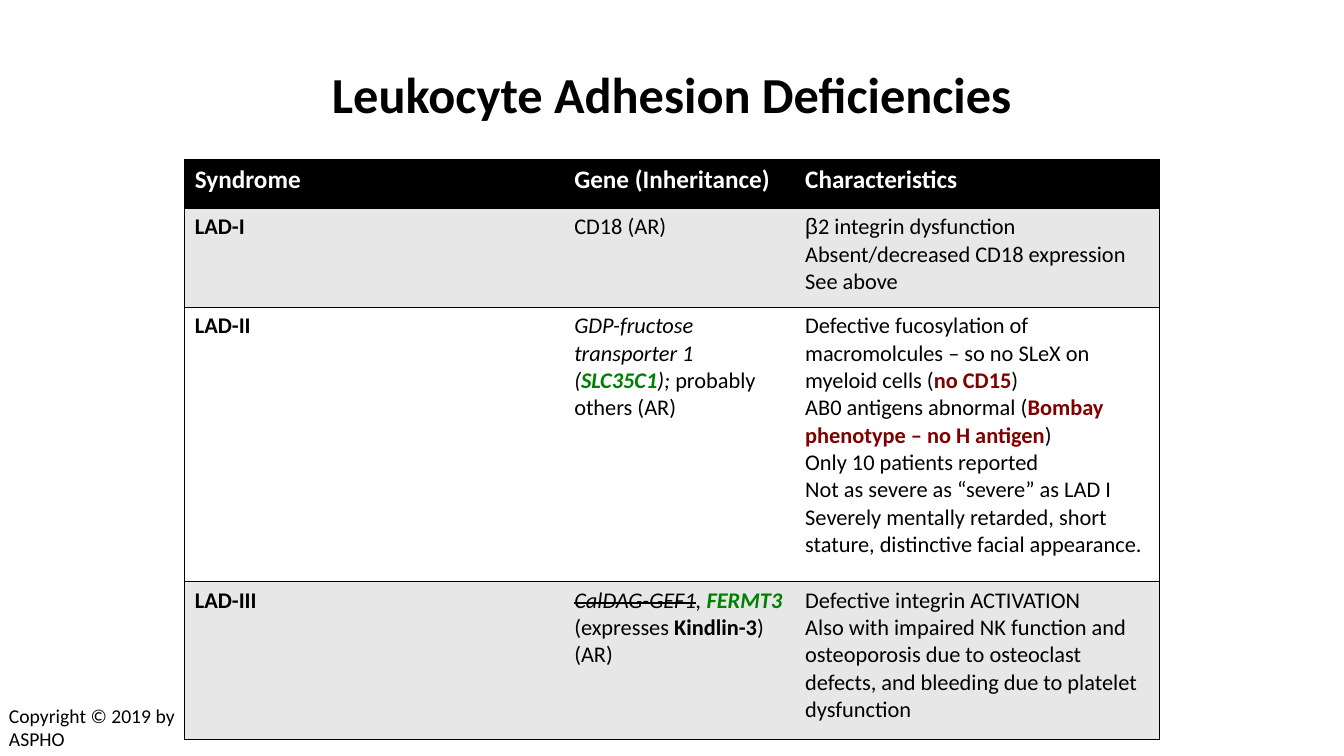
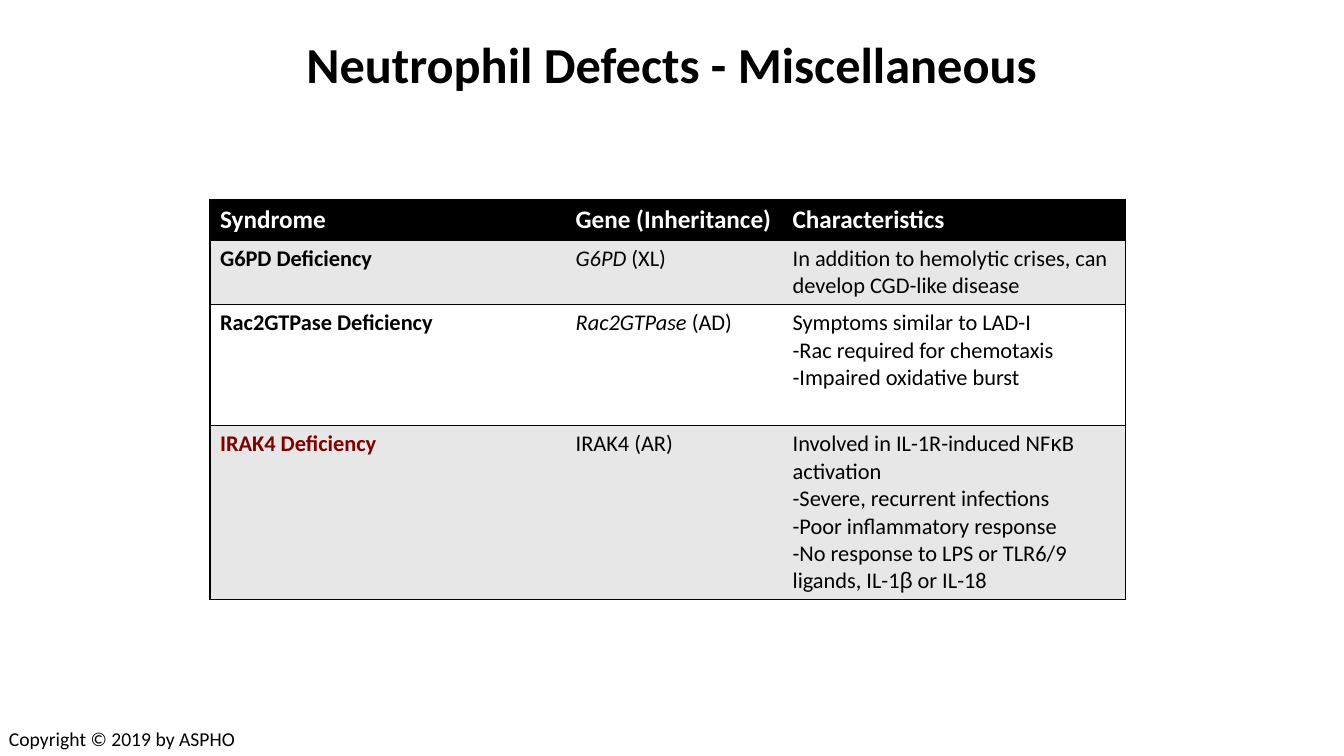
from dataclasses import dataclass

from lxml import etree
from pptx import Presentation
from pptx.dml.color import RGBColor
from pptx.enum.text import MSO_ANCHOR, PP_ALIGN
from pptx.oxml.ns import qn
from pptx.util import Pt

CENTER, LEFT = PP_ALIGN.CENTER, PP_ALIGN.LEFT
MIDDLE, TOP = MSO_ANCHOR.MIDDLE, MSO_ANCHOR.TOP


@dataclass(frozen=True)
class Theme:
    font: str = "Calibri"
    greek_font: str = "Arial"
    black: str = "000000"
    white: str = "FFFFFF"
    band: str = "E7E7E7"
    gene: str = "008000"
    alert: str = "800000"
    title_size: float = 36
    header_size: float = 18
    body_size: float = 16
    footer_size: float = 14
    border: float = 1
    inset_x: float = 7.2
    inset_y: float = 3.6


@dataclass(frozen=True)
class Style:
    color: str = Theme.black
    bold: bool = False
    italic: bool = False
    strike: bool = False
    font: str = Theme.font


THEME = Theme()
SLIDE_WIDTH, SLIDE_HEIGHT = 960, 540
BLANK_LAYOUT = 6

PLAIN = Style()
BOLD = Style(bold=True)
ITALIC = Style(italic=True)
STRUCK = Style(italic=True, strike=True)
GENE = Style(color=THEME.gene, bold=True, italic=True)
ALERT = Style(color=THEME.alert, bold=True)
HEADER = Style(color=THEME.white, bold=True)
GREEK = Style(font=THEME.greek_font)

HEADINGS = ["Syndrome", "Gene (Inheritance)", "Characteristics"]
COPYRIGHT = "Copyright © 2019 by ASPHO"

# A cell is a list of paragraphs; a paragraph is a list of (text, style) runs.
ADHESION_ROWS = [
    [
        [[("LAD-I", BOLD)]],
        [[("CD18 (AR)", PLAIN)]],
        [
            [("β", GREEK), ("2 integrin dysfunction", PLAIN)],
            [("Absent/decreased CD18 expression", PLAIN)],
            [("See above", PLAIN)],
        ],
    ],
    [
        [[("LAD-II", BOLD)]],
        [[
            ("GDP-fructose transporter 1 (", ITALIC),
            ("SLC35C1", GENE),
            ("); ", ITALIC),
            ("probably others (AR)", PLAIN),
        ]],
        [
            [
                ("Defective fucosylation of macromolcules – so no SLeX on myeloid cells (", PLAIN),
                ("no CD15", ALERT),
                (")", PLAIN),
            ],
            [
                ("AB0 antigens abnormal (", PLAIN),
                ("Bombay phenotype – no H antigen", ALERT),
                (")", PLAIN),
            ],
            [("Only 10 patients reported", PLAIN)],
            [("Not as severe as “severe” as LAD I", PLAIN)],
            [("Severely mentally retarded, short stature, distinctive facial appearance.", PLAIN)],
        ],
    ],
    [
        [[("LAD-III", BOLD)]],
        [[
            ("CalDAG-GEF1", STRUCK),
            (", ", ITALIC),
            ("FERMT3 ", GENE),
            ("(expresses ", PLAIN),
            ("Kindlin-3", BOLD),
            (") (AR)", PLAIN),
        ]],
        [
            [("Defective integrin ACTIVATION", PLAIN)],
            [(
                "Also with impaired NK function and osteoporosis due to osteoclast "
                "defects, and bleeding due to platelet dysfunction",
                PLAIN,
            )],
        ],
    ],
]

MISCELLANEOUS_ROWS = [
    [
        [[("G6PD Deficiency", BOLD)]],
        [[("G6PD", ITALIC), (" (XL)", PLAIN)]],
        [[("In addition to hemolytic crises, can develop CGD-like disease", PLAIN)]],
    ],
    [
        [[("Rac2GTPase Deficiency", BOLD)]],
        [[("Rac2GTPase ", ITALIC), ("(AD)", PLAIN)]],
        [
            [("Symptoms similar to LAD-I", PLAIN)],
            [("-Rac required for chemotaxis", PLAIN)],
            [("-Impaired oxidative burst", PLAIN)],
        ],
    ],
    [
        [[("IRAK4 Deficiency", ALERT)]],
        [[("IRAK4 (AR)", PLAIN)]],
        [
            [("Involved in IL-1R-induced NF", PLAIN), ("κ", GREEK), ("B activation", PLAIN)],
            [("-Severe, recurrent infections", PLAIN)],
            [("-Poor inflammatory response", PLAIN)],
            [
                ("-No response to LPS or TLR6/9 ligands, IL-1", PLAIN),
                ("β", GREEK),
                (" or IL-18", PLAIN),
            ],
        ],
    ],
]


def write_text(text_frame, paragraphs, size, alignment=LEFT):
    for index, runs in enumerate(paragraphs):
        paragraph = text_frame.add_paragraph() if index else text_frame.paragraphs[0]
        paragraph.alignment = alignment
        for text, style in runs:
            run = paragraph.add_run()
            run.text = text
            font = run.font
            font.name, font.size = style.font, Pt(size)
            font.bold, font.italic = style.bold, style.italic
            font.color.rgb = RGBColor.from_string(style.color)
            if style.strike:
                run._r.get_or_add_rPr().set("strike", "sngStrike")


def set_margins(target):
    target.margin_left = target.margin_right = Pt(THEME.inset_x)
    target.margin_top = target.margin_bottom = Pt(THEME.inset_y)


def add_text_box(slide, box, text, style, size, alignment=LEFT, anchor=TOP):
    shape = slide.shapes.add_textbox(*map(Pt, box))
    text_frame = shape.text_frame
    text_frame.word_wrap = True
    text_frame.vertical_anchor = anchor
    set_margins(text_frame)
    write_text(text_frame, [[(text, style)]], size, alignment)


def set_borders(cell, visible_sides):
    """Rule the named sides (L, R, T, B) and clear the others."""
    properties = cell._tc.get_or_add_tcPr()
    for side in "LRTB":
        line = etree.SubElement(properties, qn(f"a:ln{side}"), w=str(Pt(THEME.border)))
        if side in visible_sides:
            fill = etree.SubElement(line, qn("a:solidFill"))
            etree.SubElement(fill, qn("a:srgbClr"), val=THEME.black)
        else:
            etree.SubElement(line, qn("a:noFill"))


def fill_cell(cell, paragraphs, size, color, visible_sides):
    set_margins(cell)
    write_text(cell.text_frame, paragraphs, size)
    set_borders(cell, visible_sides)
    cell.fill.solid()
    cell.fill.fore_color.rgb = RGBColor.from_string(color)


def add_syndrome_table(slide, left, top, column_widths, row_heights, body_rows):
    rows = [[[[(heading, HEADER)]] for heading in HEADINGS]] + body_rows
    frame = slide.shapes.add_table(
        len(rows), len(HEADINGS), Pt(left), Pt(top),
        Pt(sum(column_widths)), Pt(sum(row_heights)),
    )
    table = frame.table
    table.horz_banding = False
    for column, width in zip(table.columns, column_widths):
        column.width = Pt(width)
    for row, height in zip(table.rows, row_heights):
        row.height = Pt(height)

    side_borders = ["LTB", "TB", "RTB"]
    for row_index, row in enumerate(rows):
        size = THEME.body_size if row_index else THEME.header_size
        color = THEME.band if row_index % 2 else THEME.white
        if row_index == 0:
            color = THEME.black
        for column_index, paragraphs in enumerate(row):
            cell = table.cell(row_index, column_index)
            fill_cell(cell, paragraphs, size, color, side_borders[column_index])


def add_footer(slide, width, height):
    box = (-0.7, SLIDE_HEIGHT - height, width, height)
    add_text_box(slide, box, COPYRIGHT, PLAIN, THEME.footer_size)


def add_table_slide(presentation, title, title_box, table_layout, body_rows, footer_size):
    slide = presentation.slides.add_slide(presentation.slide_layouts[BLANK_LAYOUT])
    add_text_box(slide, title_box, title, BOLD, THEME.title_size, CENTER, MIDDLE)
    add_syndrome_table(slide, **table_layout, body_rows=body_rows)
    add_footer(slide, *footer_size)


def main():
    presentation = Presentation()
    presentation.slide_width = Pt(SLIDE_WIDTH)
    presentation.slide_height = Pt(SLIDE_HEIGHT)
    add_table_slide(
        presentation,
        title="Leukocyte Adhesion Deficiencies",
        title_box=(48, 21.6, 864, 90),
        table_layout={
            "left": 132,
            "top": 114,
            "column_widths": [271, 165, 260],
            "row_heights": [35, 70.5, 196, 112.5],
        },
        body_rows=ADHESION_ROWS,
        footer_size=(133.2, 41),
    )
    add_table_slide(
        presentation,
        title="Neutrophil Defects - Miscellaneous",
        title_box=(156, 0, 648, 90),
        table_layout={
            "left": 150,
            "top": 142.5,
            "column_widths": [254, 155, 245],
            "row_heights": [29, 46, 86.5, 124],
        },
        body_rows=MISCELLANEOUS_ROWS,
        footer_size=(178.6, 24.5),
    )
    presentation.save("out.pptx")


if __name__ == "__main__":
    main()
